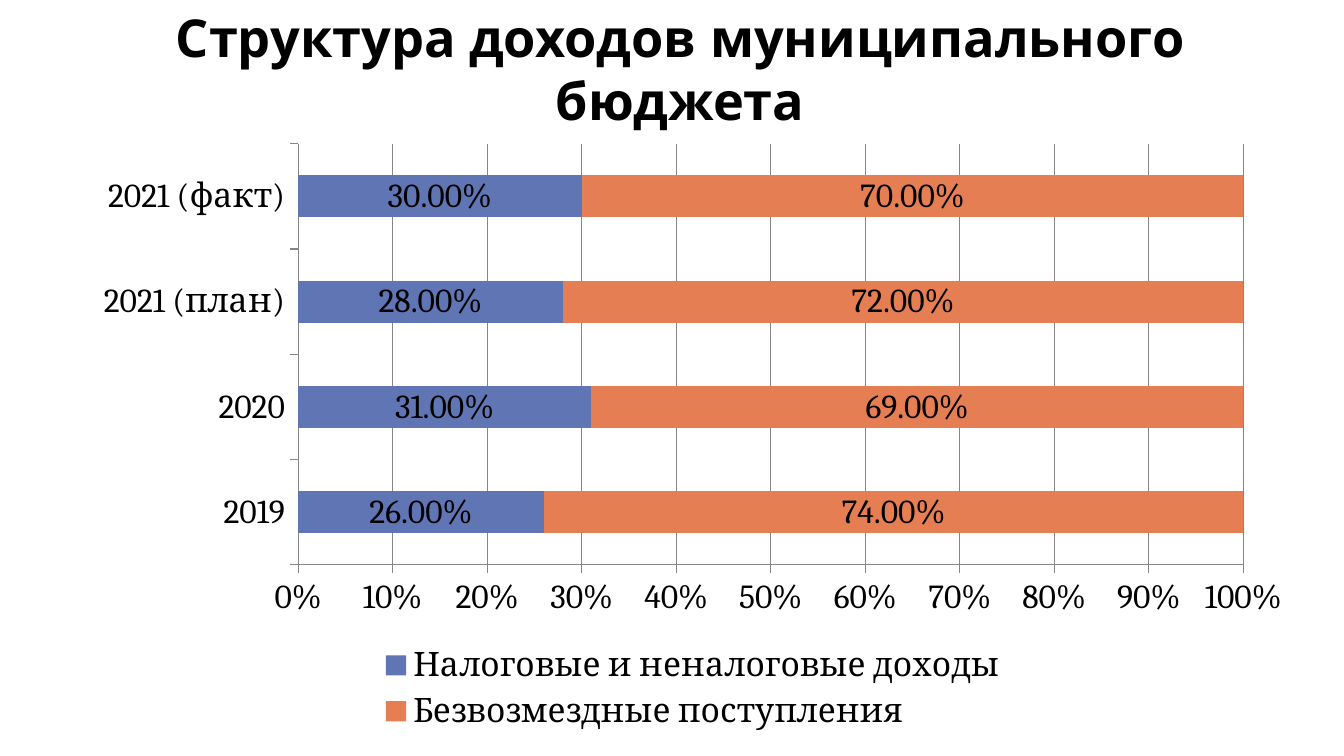
from pptx import Presentation
from pptx.chart.data import CategoryChartData
from pptx.dml.color import RGBColor
from pptx.enum.chart import XL_CHART_TYPE as ChartType
from pptx.enum.chart import XL_LABEL_POSITION as LabelPosition
from pptx.enum.chart import XL_LEGEND_POSITION as LegendPosition
from pptx.enum.chart import XL_TICK_MARK as TickMark
from pptx.enum.text import MSO_ANCHOR as Anchor
from pptx.enum.text import PP_ALIGN as Align
from pptx.util import Inches, Pt

BLACK = RGBColor(0x00, 0x00, 0x00)
GRAY = RGBColor(0x86, 0x86, 0x86)
BLUE = RGBColor(0x60, 0x76, 0xB4)
ORANGE = RGBColor(0xE6, 0x7E, 0x53)

YEARS = ["2019", "2020", "2021 (план)", "2021 (факт)"]
INCOME = [
    ("Налоговые и неналоговые доходы", [0.26, 0.31, 0.28, 0.30], BLUE),
    ("Безвозмездные поступления", [0.74, 0.69, 0.72, 0.70], ORANGE),
]


def set_font(target, name, size, color=BLACK, bold=False):
    target.name = name
    target.size = Pt(size)
    target.bold = bold
    target.color.rgb = color


def write_text(frame, text, *, font, size, color=BLACK, bold=False,
               align=Align.LEFT):
    paragraph = frame.paragraphs[0]
    paragraph.alignment = align
    run = paragraph.add_run()
    run.text = text
    set_font(run.font, font, size, color, bold)


class SlideBuilder:
    title_font = "Noto Sans"
    chart_font = "Cambria"

    def __init__(self, slide):
        self.slide = slide

    def title(self, text, left, top, width, height):
        shape = self.slide.shapes.add_textbox(
            Inches(left), Inches(top), Inches(width), Inches(height))
        frame = shape.text_frame
        frame.word_wrap = True
        frame.vertical_anchor = Anchor.MIDDLE
        write_text(frame, text, font=self.title_font, size=28, bold=True,
                   align=Align.CENTER)

    def stacked_bars(self, categories, rows, left, top, width, height):
        data = CategoryChartData(number_format="0.00%")
        data.categories = categories
        for name, values, _ in rows:
            data.add_series(name, values)
        chart = self.slide.shapes.add_chart(
            ChartType.BAR_STACKED_100, Inches(left), Inches(top),
            Inches(width), Inches(height), data).chart
        chart.has_title = False
        set_font(chart.font, self.chart_font, 18)

        # Legend
        chart.has_legend = True
        chart.legend.position = LegendPosition.BOTTOM
        chart.legend.include_in_layout = False

        # Axes
        for axis in (chart.category_axis, chart.value_axis):
            axis.major_tick_mark = TickMark.OUTSIDE
            axis.minor_tick_mark = TickMark.NONE
            axis.format.line.color.rgb = GRAY
        value_axis = chart.value_axis
        value_axis.minimum_scale = 0
        value_axis.maximum_scale = 1
        value_axis.major_unit = 0.1
        value_axis.has_major_gridlines = True
        value_axis.major_gridlines.format.line.color.rgb = GRAY
        value_axis.tick_labels.number_format = "0%"
        value_axis.tick_labels.number_format_is_linked = False

        # Bars and their labels
        plot = chart.plots[0]
        plot.gap_width = 150
        plot.overlap = 100
        plot.vary_by_categories = False
        for series, (_, _, color) in zip(plot.series, rows):
            series.format.fill.solid()
            series.format.fill.fore_color.rgb = color
            labels = series.data_labels
            labels.show_value = True
            labels.number_format = "0.00%"
            labels.number_format_is_linked = False
            labels.position = LabelPosition.CENTER
            set_font(labels.font, self.chart_font, 18)


def main():
    # Widescreen page, 16 by 9
    presentation = Presentation()
    presentation.slide_width = Inches(10)
    presentation.slide_height = Inches(10) * 9 // 16
    slide = presentation.slides.add_slide(presentation.slide_layouts[6])
    builder = SlideBuilder(slide)
    builder.title("Структура доходов муниципального бюджета",
                  0.31, 0.16, 9.5, 0.69)
    builder.stacked_bars(YEARS, INCOME, 0.59, 0.98, 9.13, 4.51)
    presentation.save("out.pptx")


if __name__ == "__main__":
    main()
